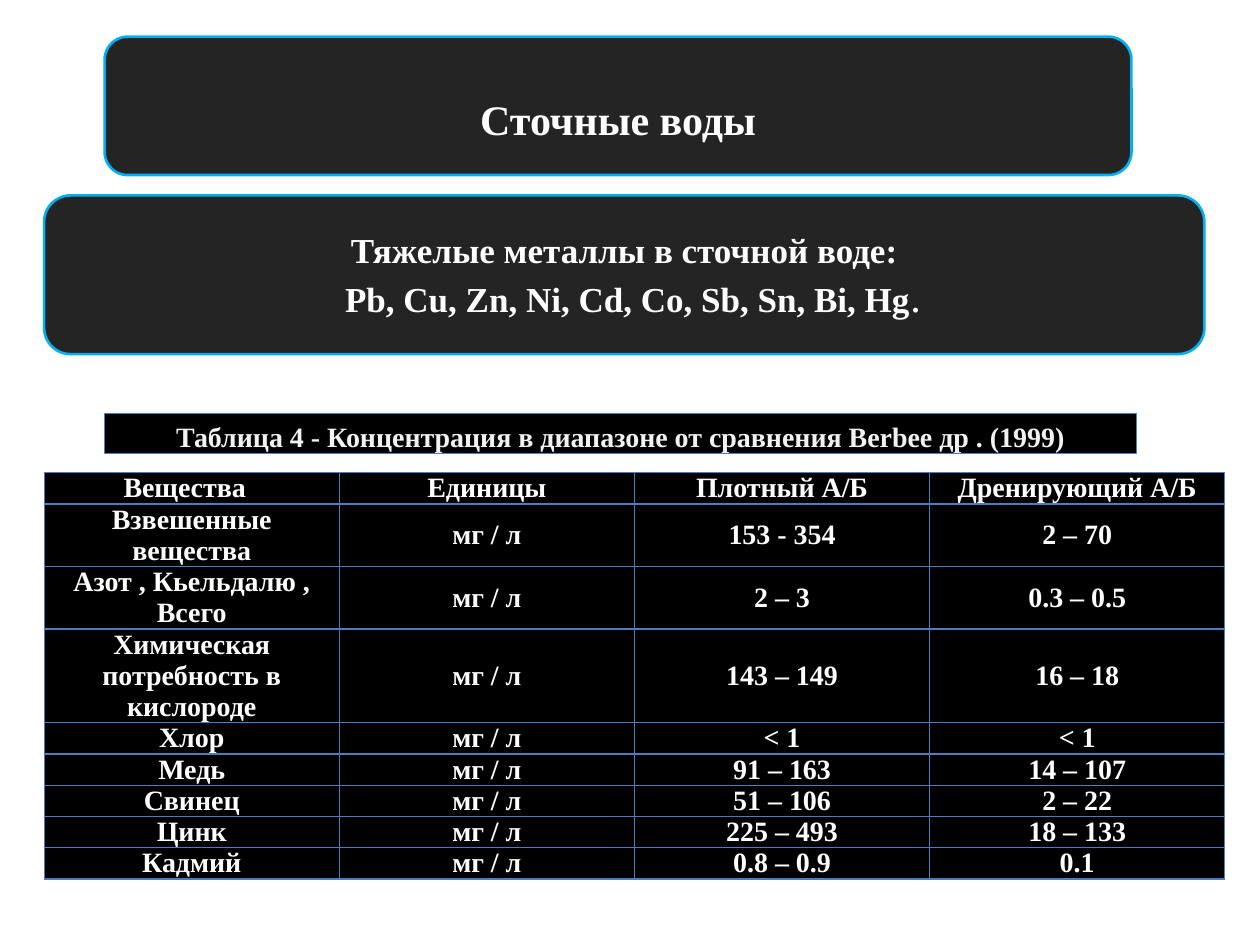
from dataclasses import dataclass

from lxml import etree
from pptx import Presentation
from pptx.dml.color import RGBColor as RGB
from pptx.enum.shapes import MSO_SHAPE as SHAPE
from pptx.enum.text import MSO_ANCHOR as ANCHOR, MSO_AUTO_SIZE as FIT, PP_ALIGN as ALIGN
from pptx.oxml import parse_xml
from pptx.oxml.ns import nsdecls, qn
from pptx.util import Cm, Pt


@dataclass
class Theme:
    font: str = "Times New Roman"
    white: str = "FFFFFF"
    caption: str = "F2F2F2"
    black: str = "000000"
    frame: str = "00B0F0"
    caption_line: str = "4F81BD"
    grid: str = "4B7EBC"
    title_size: int = 24
    body_size: int = 20
    table_size: int = 16
    period_size: int = 24


th = Theme()


def add_run(p, text, size, color=th.white, bold=True):
    p.alignment = ALIGN.CENTER
    r = p.add_run()
    r.text = text
    r.font.name, r.font.size, r.font.bold = th.font, Pt(size), bold
    r.font.color.rgb = RGB.from_string(color)


def add_panel(kind, x, y, w, h, line, width, opacity=100):
    sp = s.shapes.add_shape(kind, Cm(x), Cm(y), Cm(w), Cm(h))
    sp.shadow.inherit = False
    sp.fill.solid()
    sp.fill.fore_color.rgb = RGB.from_string(th.black)
    if opacity < 100:
        clr = sp.fill._xPr.find(qn("a:solidFill"))[0]
        etree.SubElement(clr, qn("a:alpha")).set("val", str(opacity * 1000))
    sp.line.color.rgb = RGB.from_string(line)
    sp.line.width = Pt(width)
    sp.text_frame.word_wrap = True
    sp.text_frame.vertical_anchor = ANCHOR.MIDDLE
    return sp


prs = Presentation()
prs.slide_width, prs.slide_height = Cm(25.4), Cm(19.05)
s = prs.slides.add_slide(prs.slide_layouts[5])

# Heavy metals panel
tf = add_panel(SHAPE.ROUNDED_RECTANGLE, 0.89, 3.94, 23.39, 3.2, th.frame, 1.5, 86).text_frame
add_run(tf.paragraphs[0], "Тяжелые металлы в сточной воде:", th.body_size)
p = tf.add_paragraph()
p._p.get_or_add_pPr().set("marL", str(Cm(0.35)))
add_run(p, "Pb, Cu, Zn, Ni, Cd, Co, Sb, Sn, Bi, Hg", th.body_size)
add_run(p, ".", th.period_size, bold=False)

# Title on its panel
panel = add_panel(SHAPE.ROUNDED_RECTANGLE, 2.11, 0.74, 20.7, 2.79, th.frame, 1.5, 86)
title = s.shapes.title
title.left, title.top, title.width, title.height = panel.left, panel.top, panel.width, panel.height
panel._element.addnext(title._element)
tf = title.text_frame
tf.word_wrap = True
tf.auto_size = FIT.NONE
tf.vertical_anchor = ANCHOR.MIDDLE
p = tf.paragraphs[0]
p.line_spacing = 1.5
add_run(p, "Сточные воды", th.title_size)

# Concentration table: lines of text in each row, then its cells
unit = "мг / л"
rows = [
    (1, "Вещества", "Единицы", "Плотный А/Б", "Дренирующий А/Б"),
    (2, "Взвешенные вещества", unit, "153 - 354", "2 – 70"),
    (2, "Азот , Кьельдалю , Всего", unit, "2 – 3", "0.3 – 0.5"),
    (3, "Химическая потребность в кислороде", unit, "143 – 149", "16 – 18"),
    (1, "Хлор", unit, "< 1", "< 1"),
    (1, "Медь", unit, "91 – 163", "14 – 107"),
    (1, "Свинец", unit, "51 – 106", "2 – 22"),
    (1, "Цинк", unit, "225 – 493", "18 – 133"),
    (1, "Кадмий", unit, "0.8 – 0.9", "0.1"),
]
line_h, col_w = 0.63, 5.95
total_h = line_h * sum(row[0] for row in rows)
table = s.shapes.add_table(len(rows), 4, Cm(0.89), Cm(9.53), Cm(4 * col_w), Cm(total_h)).table
for col in table.columns:
    col.width = Cm(col_w)
for i, (lines, *texts) in enumerate(rows):
    table.rows[i].height = Cm(line_h * lines)
    for j, text in enumerate(texts):
        cell = table.cell(i, j)
        cell.margin_left = cell.margin_right = Cm(0.19)
        cell.margin_top = cell.margin_bottom = 0
        cell.vertical_anchor = ANCHOR.MIDDLE
        cell.fill.solid()
        cell.fill.fore_color.rgb = RGB.from_string(th.black)
        add_run(cell.text_frame.paragraphs[0], text, th.table_size)
        tcPr = cell._tc.get_or_add_tcPr()
        for k, side in enumerate("LRTB"):
            tcPr.insert(k, parse_xml(
                f'<a:ln{side} {nsdecls("a")} w="{Pt(0.75)}"><a:solidFill>'
                f'<a:srgbClr val="{th.grid}"/></a:solidFill></a:ln{side}>'))
table.cell(0, 0).margin_right = Cm(0.47)

# Table caption
tf = add_panel(SHAPE.RECTANGLE, 2.11, 8.33, 20.8, 0.81, th.caption_line, 0.75).text_frame
tf.margin_bottom = 0
add_run(tf.paragraphs[0], "Таблица 4 - Концентрация в диапазоне от сравнения Berbee др . (1999)",
        th.table_size, th.caption)

prs.save("out.pptx")
